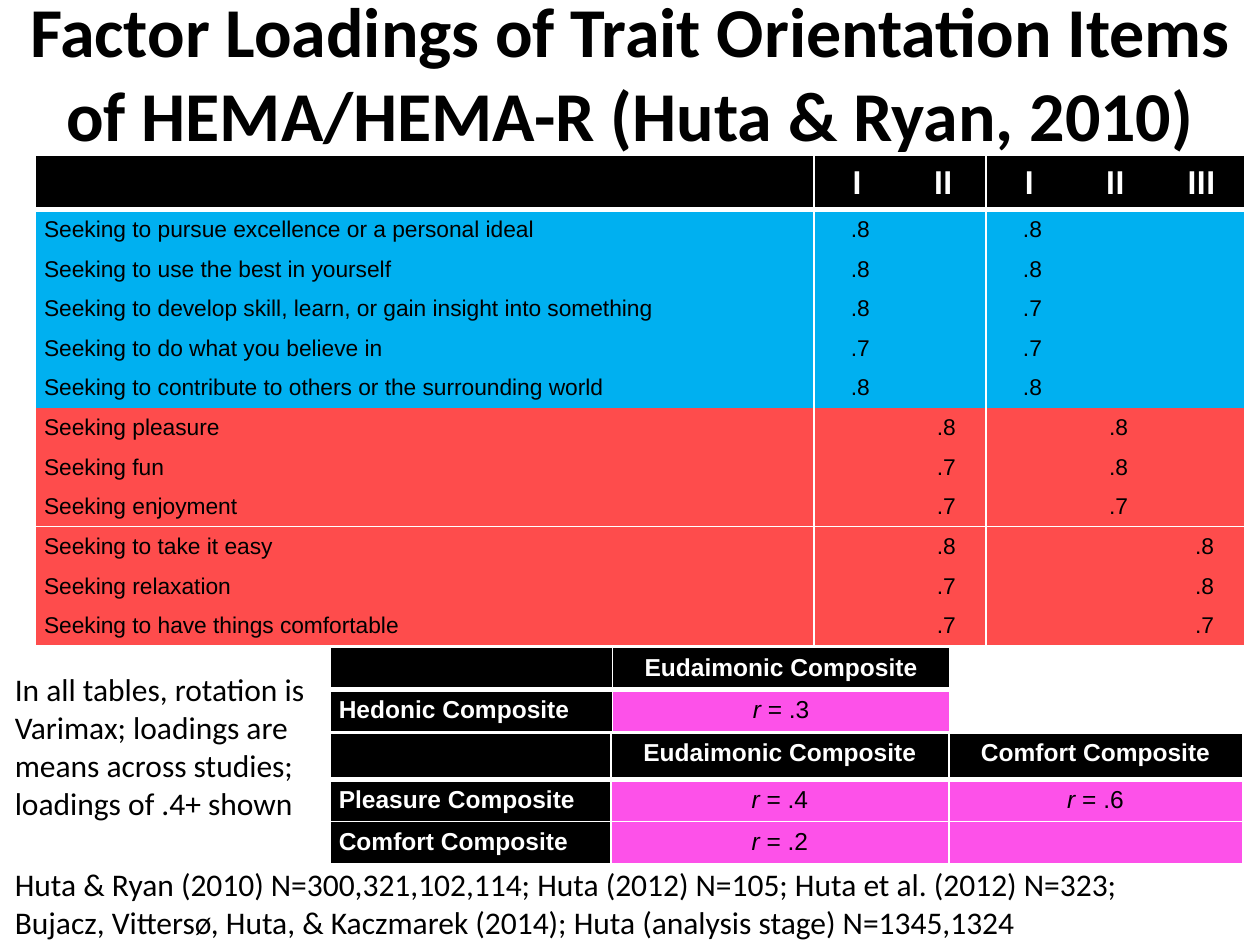
import dataclasses

import pptx
import pptx.dml.color
import pptx.enum.text
import pptx.oxml
import pptx.oxml.ns
import pptx.util
from lxml import etree

Pt = pptx.util.Pt
ALIGN = pptx.enum.text.PP_ALIGN
ANCHOR = pptx.enum.text.MSO_ANCHOR


@dataclasses.dataclass(frozen=True)
class Theme:
    black: str = "000000"
    white: str = "FFFFFF"
    eudaimonic: str = "00B0F0"
    hedonic: str = "FE4C4C"
    correlation: str = "FD51E9"
    heading_font: str = "Calibri"
    table_font: str = "Arial"
    title_size: float = 40
    factor_size: float = 20
    note_size: float = 18
    composite_size: float = 14
    item_size: float = 13


THEME = Theme()

TITLE = "Factor Loadings of Trait Orientation Items of HEMA/HEMA-R (Huta & Ryan, 2010)"
FACTORS = ["I", "II", "I", "II", "III"]
# Item, then its loadings keyed by table column
EUDAIMONIC_ITEMS = [
    ("Seeking to pursue excellence or a personal ideal", {1: ".8", 3: ".8"}),
    ("Seeking to use the best in yourself", {1: ".8", 3: ".8"}),
    ("Seeking to develop skill, learn, or gain insight into something", {1: ".8", 3: ".7"}),
    ("Seeking to do what you believe in", {1: ".7", 3: ".7"}),
    ("Seeking to contribute to others or the surrounding world", {1: ".8", 3: ".8"}),
]
HEDONIC_ITEMS = [
    ("Seeking pleasure", {2: ".8", 4: ".8"}),
    ("Seeking fun", {2: ".7", 4: ".8"}),
    ("Seeking enjoyment", {2: ".7", 4: ".7"}),
    ("Seeking to take it easy", {2: ".8", 5: ".8"}),
    ("Seeking relaxation", {2: ".7", 5: ".8"}),
    ("Seeking to have things comfortable", {2: ".7", 5: ".7"}),
]
ROTATION_NOTE = [
    "In all tables, rotation is Varimax; loadings are means across studies; "
    "loadings of .4+ shown"
]
SAMPLES = [
    "Huta & Ryan (2010) N=300,321,102,114; Huta (2012) N=105; Huta et al. (2012) N=323;",
    "Bujacz, Vittersø, Huta, & Kaczmarek (2014); Huta (analysis stage) N=1345,1324",
]


def rgb(color):
    return pptx.dml.color.RGBColor.from_string(color)


def add_run(paragraph, text, font, size, color, bold=False, italic=False):
    run = paragraph.add_run()
    run.text = text
    run.font.name = font
    run.font.size = Pt(size)
    run.font.color.rgb = rgb(color)
    run.font.bold = bold
    run.font.italic = italic


def set_borders(cell, widths):
    """Draw the left, right, top and bottom rules; a width of 0 means none."""
    properties = cell._tc.get_or_add_tcPr()
    for index, (side, width) in enumerate(zip("LRTB", widths)):
        line = etree.Element(pptx.oxml.ns.qn(f"a:ln{side}"), w=str(int(Pt(width))))
        if width:
            fill = etree.SubElement(line, pptx.oxml.ns.qn("a:solidFill"))
            etree.SubElement(fill, pptx.oxml.ns.qn("a:srgbClr"), val=THEME.white)
        else:
            etree.SubElement(line, pptx.oxml.ns.qn("a:noFill"))
        properties.insert(index, line)


def add_grid(slide, box, columns, rows, vertical, horizontal):
    """Add an empty table; the rules map edge numbers to line widths."""
    left, top = box
    frame = slide.shapes.add_table(len(rows), len(columns), Pt(left), Pt(top),
                                   Pt(sum(columns)), Pt(sum(rows)))
    table = frame.table
    for column, width in zip(table.columns, columns):
        column.width = Pt(width)
    for row, height in zip(table.rows, rows):
        row.height = Pt(height)
    for r in range(len(rows)):
        for c in range(len(columns)):
            cell = table.cell(r, c)
            cell.margin_top = cell.margin_bottom = 0
            cell.margin_left = cell.margin_right = Pt(5)
            cell.vertical_anchor = ANCHOR.MIDDLE
            set_borders(cell, [vertical.get(c, 0), vertical.get(c + 1, 0),
                               horizontal.get(r, 0), horizontal.get(r + 1, 0)])
    return table


def paint(cell, color):
    cell.fill.solid()
    cell.fill.fore_color.rgb = rgb(color)


def start_text(cell, align=ALIGN.CENTER):
    paragraph = cell.text_frame.paragraphs[0]
    paragraph.alignment = align
    return paragraph


def add_title(slide, box):
    title = slide.shapes.title
    title.left, title.top, title.width, title.height = map(Pt, box)
    frame = title.text_frame
    frame.auto_size = pptx.enum.text.MSO_AUTO_SIZE.NONE
    frame.word_wrap = True
    frame.vertical_anchor = ANCHOR.MIDDLE
    frame.paragraphs[0].alignment = ALIGN.CENTER
    add_run(frame.paragraphs[0], TITLE, THEME.heading_font, THEME.title_size,
            THEME.black, bold=True)


def add_loadings(slide, box):
    items = [(THEME.eudaimonic, *item) for item in EUDAIMONIC_ITEMS]
    items += [(THEME.hedonic, *item) for item in HEDONIC_ITEMS]
    table = add_grid(slide, box, [445] + [49.2] * len(FACTORS),
                     [31.2] + [22.67] * len(items),
                     vertical={0: 1, 1: 1, 3: 1, 6: 1},
                     horizontal={0: 1, 1: 3, 9: 1, 12: 1})
    for c, factor in enumerate([""] + FACTORS):
        cell = table.cell(0, c)
        paint(cell, THEME.black)
        if factor:
            add_run(start_text(cell), factor, THEME.heading_font,
                    THEME.factor_size, THEME.white, bold=True)
    for r, (color, item, loadings) in enumerate(items, start=1):
        for c in range(len(FACTORS) + 1):
            cell = table.cell(r, c)
            paint(cell, color)
            if c == 0:
                add_run(start_text(cell, ALIGN.LEFT), item, THEME.table_font,
                        THEME.item_size, THEME.black)
            elif c in loadings:
                add_run(start_text(cell), " " + loadings[c], THEME.table_font,
                        THEME.item_size, THEME.black)


def add_composites(slide, box, columns, heights, headings, correlations):
    """Add a correlation table; each row is a composite and its r values."""
    table = add_grid(slide, box, columns, heights,
                     vertical={edge: 1 for edge in range(len(columns) + 1)},
                     horizontal={edge: 3 if edge == 1 else 1
                                 for edge in range(len(heights) + 1)})
    font, size = THEME.table_font, THEME.composite_size
    paint(table.cell(0, 0), THEME.black)
    for c, heading in enumerate(headings, start=1):
        cell = table.cell(0, c)
        paint(cell, THEME.black)
        cell.vertical_anchor = ANCHOR.TOP
        cell.margin_top = Pt(3.6)
        add_run(start_text(cell), heading, font, size, THEME.white, bold=True)
    for r, (composite, values) in enumerate(correlations, start=1):
        label = table.cell(r, 0)
        paint(label, THEME.black)
        add_run(start_text(label, ALIGN.LEFT), composite, font, size, THEME.white, bold=True)
        for c, value in enumerate(values, start=1):
            cell = table.cell(r, c)
            paint(cell, THEME.correlation)
            if value:
                paragraph = start_text(cell)
                add_run(paragraph, "r", font, size, THEME.black, italic=True)
                add_run(paragraph, f" = {value}", font, size, THEME.black)


def add_note(slide, box, lines):
    frame = slide.shapes.add_textbox(*map(Pt, box)).text_frame
    frame.word_wrap = True
    for index, line in enumerate(lines):
        paragraph = frame.add_paragraph() if index else frame.paragraphs[0]
        add_run(paragraph, line, THEME.heading_font, THEME.note_size, THEME.black)


def main():
    deck = pptx.Presentation()
    deck.slide_width, deck.slide_height = Pt(720), Pt(540)
    slide = deck.slides.add_slide(deck.slide_layouts[5])
    add_title(slide, (0, 10, 720, 62))
    add_loadings(slide, (20.2, 88.6))
    add_composites(slide, (188.6, 370), [161.3, 193], [24, 24],
                   ["Eudaimonic Composite"], [("Hedonic Composite", [".3"])])
    add_note(slide, (1.4, 491, 696, 51), SAMPLES)
    add_composites(slide, (188.6, 419), [160.6, 193, 167.8], [26.4, 24, 24],
                   ["Eudaimonic Composite", "Comfort Composite"],
                   [("Pleasure Composite", [".4", ".6"]),
                    ("Comfort Composite", [".2", ""])])
    add_note(slide, (1.4, 379.4, 183, 94.3), ROTATION_NOTE)
    deck.save("out.pptx")


if __name__ == "__main__":
    main()
